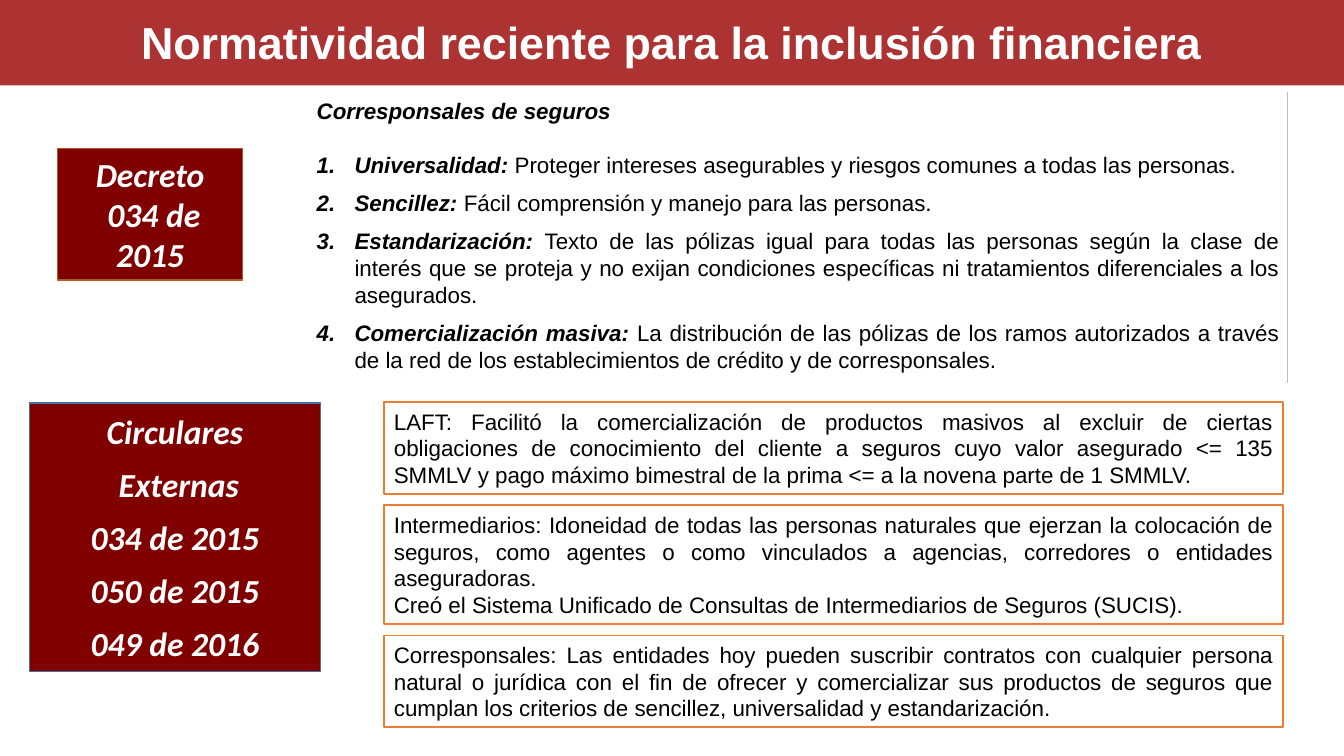
from lxml import etree
from pptx import Presentation
from pptx.dml.color import RGBColor
from pptx.enum.shapes import MSO_CONNECTOR, MSO_SHAPE
from pptx.enum.text import MSO_ANCHOR, MSO_AUTO_SIZE, PP_ALIGN
from pptx.oxml.ns import qn
from pptx.util import Pt

RECT = MSO_SHAPE.RECTANGLE
STRAIGHT = MSO_CONNECTOR.STRAIGHT
TOP, MIDDLE = MSO_ANCHOR.TOP, MSO_ANCHOR.MIDDLE
CENTER, JUSTIFY = PP_ALIGN.CENTER, PP_ALIGN.JUSTIFY
FIXED = MSO_AUTO_SIZE.NONE

WHITE = RGBColor(0xFF, 0xFF, 0xFF)
BLACK = RGBColor(0, 0, 0)
RED = RGBColor(0xAD, 0x33, 0x33)
MAROON = RGBColor(0x80, 0, 0)
BLUE = RGBColor(0x43, 0x73, 0x9E)
BROWN = RGBColor(0xAF, 0x5C, 0x24)
ORANGE = RGBColor(0xED, 0x7D, 0x31)
GREY = RGBColor(0xBF, 0xBF, 0xBF)

TITLE = "Normatividad reciente para la inclusión financiera"
HEADING = "Corresponsales de seguros"
RULES = [
    ("Universalidad: ", "Proteger intereses asegurables y riesgos comunes a "
     "todas las personas."),
    ("Sencillez: ", "Fácil comprensión y manejo para las personas."),
    ("Estandarización: ", "Texto de las pólizas igual para todas las personas "
     "según la clase de interés que se proteja y no exijan condiciones "
     "específicas ni tratamientos diferenciales a los asegurados."),
    ("Comercialización masiva: ", "La distribución de las pólizas de los ramos "
     "autorizados a través de la red de los establecimientos de crédito y de "
     "corresponsales."),
]
DECREE = ["Decreto", " 034 de", "2015"]
CIRCULARS = ["Circulares", " Externas", "034 de 2015", "050 de 2015", "049 de 2016"]
NOTES = [
    (["LAFT: Facilitó la comercialización de productos masivos al excluir de "
      "ciertas obligaciones de conocimiento del cliente a seguros cuyo valor "
      "asegurado <= 135 SMMLV y pago máximo bimestral de la prima <= a la "
      "novena parte de 1 SMMLV."], 65.5),
    (["Intermediarios: Idoneidad de todas las personas naturales que ejerzan "
      "la colocación de seguros, como agentes o como vinculados a agencias, "
      "corredores o entidades aseguradoras.",
      "Creó el Sistema Unificado de Consultas de Intermediarios de Seguros "
      "(SUCIS)."], 85),
    (["Corresponsales: Las entidades hoy pueden suscribir contratos con "
      "cualquier persona natural o jurídica con el fin de ofrecer y "
      "comercializar sus productos de seguros que cumplan los criterios de "
      "sencillez, universalidad y estandarización."], 65.5),
]


def style(run, size, color, face="Arial", bold=False, italic=False):
    font = run.font
    font.name, font.size, font.color.rgb = face, Pt(size), color
    font.bold, font.italic = bold, italic


def place(shape, left, top, width, height):
    shape.left, shape.top = Pt(left), Pt(top)
    shape.width, shape.height = Pt(width), Pt(height)


def setup(frame, anchor):
    frame.word_wrap = True
    frame.auto_size = FIXED
    frame.vertical_anchor = anchor


def add_box(slide, box, lines, fill, edge, align, gap=0, **look):
    """Outlined box with one paragraph per line."""
    shape = slide.shapes.add_shape(RECT, *map(Pt, box))
    shape.shadow.inherit = False
    shape.fill.solid()
    shape.fill.fore_color.rgb = fill
    shape.line.color.rgb = edge
    shape.line.width = Pt(1)
    frame = shape.text_frame
    setup(frame, MIDDLE)
    frame.text = "\n".join(lines)
    for i, para in enumerate(frame.paragraphs):
        para.alignment = align
        para.space_before = Pt(gap if i else 0)
        style(para.runs[0], **look)


def add_title(slide, box):
    title = slide.shapes.title
    place(title, *box)
    title.fill.solid()
    title.fill.fore_color.rgb = RED
    frame = title.text_frame
    setup(frame, MIDDLE)
    frame.text = TITLE
    para = frame.paragraphs[0]
    para.alignment = CENTER
    style(para.runs[0], 32, WHITE, bold=True)


def add_rules(slide, box):
    """Heading and numbered list, with a thin rule at the right."""
    left, top, width, height = box
    body = slide.placeholders[1]
    place(body, *box)
    frame = body.text_frame
    setup(frame, TOP)
    frame.text = "\n".join([HEADING] + [name for name, _ in RULES])
    for i, para in enumerate(frame.paragraphs):
        para.alignment = JUSTIFY
        para.space_before = Pt((0, 19)[i] if i < 2 else 8)
        style(para.runs[0], 16, BLACK, bold=True, italic=True)
        props = para._p.get_or_add_pPr()
        indent = Pt(27) if i else 0
        props.set("marL", str(indent))
        props.set("indent", str(-indent))
        if i:
            etree.SubElement(props, qn("a:buFont"), typeface="+mj-lt")
            etree.SubElement(props, qn("a:buAutoNum"), type="arabicPeriod")
            run = para.add_run()
            run.text = RULES[i - 1][1]
            style(run, 16, BLACK)
        else:
            etree.SubElement(props, qn("a:buNone"))

    side = left + width - 1.5
    rule = slide.shapes.add_connector(
        STRAIGHT, Pt(side), Pt(top), Pt(side), Pt(top + height))
    rule.line.color.rgb = GREY
    rule.line.width = Pt(0.75)
    etree.SubElement(rule._element.spPr, qn("a:effectLst"))


def add_notes(slide, left, top, width, gap):
    """Stack of outlined notes, evenly spaced."""
    for lines, height in NOTES:
        add_box(slide, (left, top, width, height), lines, WHITE, ORANGE,
                JUSTIFY, size=16, color=BLACK)
        top += height + gap


def main():
    deck = Presentation()
    deck.slide_width, deck.slide_height = Pt(960), Pt(540)
    slide = deck.slides.add_slide(deck.slide_layouts[1])
    label = dict(size=24, color=WHITE, face="Calibri", bold=True, italic=True)

    add_title(slide, (0, -1.5, 960, 62.5))
    # Decree and its principles
    add_rules(slide, (219, 66, 702, 207.5))
    add_box(slide, (41, 106, 132.5, 94), DECREE, MAROON, BROWN, CENTER, **label)
    # Circulars and their contents
    add_box(slide, (21, 288, 208, 191.5), CIRCULARS, MAROON, BLUE, CENTER,
            gap=9, **label)
    add_notes(slide, 274.25, 287.25, 642.25, 8)
    deck.save("out.pptx")


if __name__ == "__main__":
    main()
